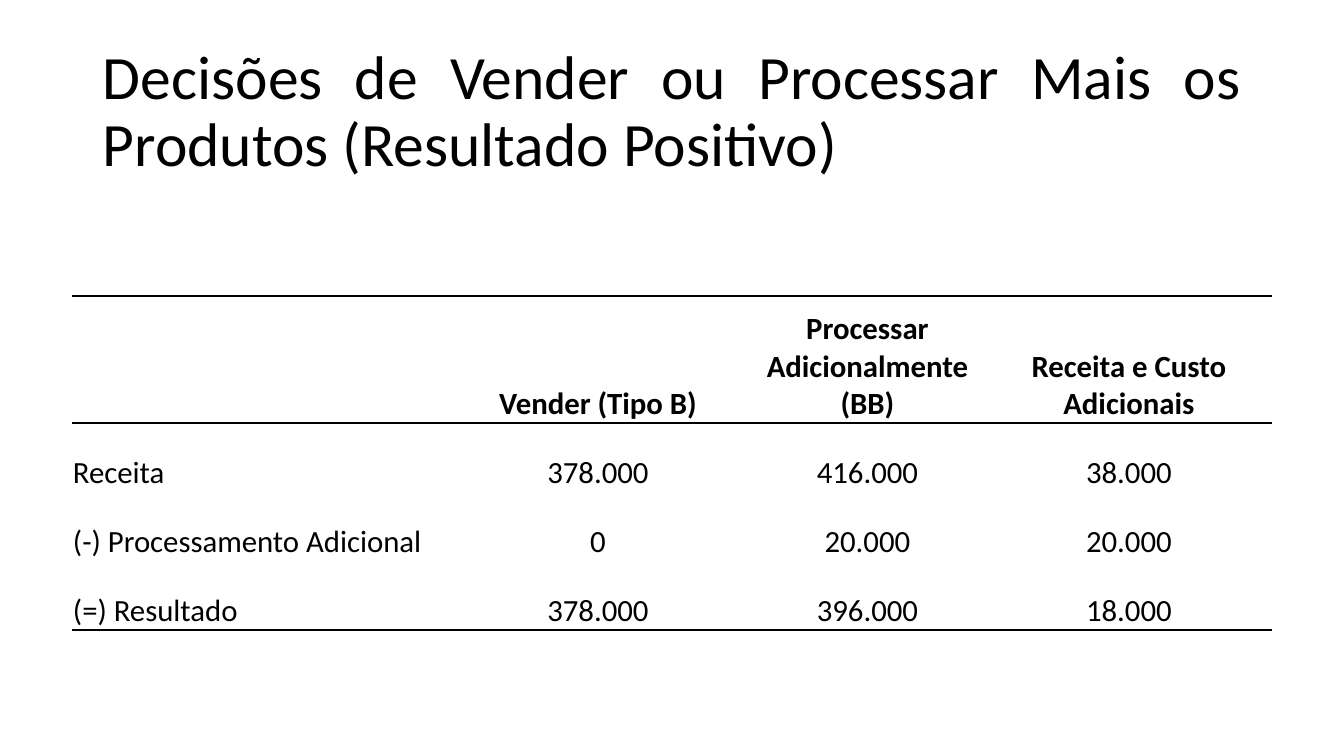
from lxml import etree
from pptx import Presentation
from pptx.dml.color import RGBColor
from pptx.enum.text import MSO_ANCHOR, PP_ALIGN
from pptx.oxml.ns import qn
from pptx.util import Pt

MIDDLE, BOTTOM = MSO_ANCHOR.MIDDLE, MSO_ANCHOR.BOTTOM
LEFT, CENTER, JUSTIFY = PP_ALIGN.LEFT, PP_ALIGN.CENTER, PP_ALIGN.JUSTIFY
SLIDE_WIDTH, SLIDE_HEIGHT = 1344, 756
SCALE = 12192000 / SLIDE_WIDTH

TITLE = "Decisões de Vender ou Processar Mais os Produtos (Resultado Positivo)"
ROWS = [
    ["", "Vender (Tipo B)", "Processar Adicionalmente (BB)", "Receita e Custo Adicionais"],
    ["Receita", "378.000", "416.000", "38.000"],
    ["(-) Processamento Adicional", "0", "20.000", "20.000"],
    ["(=) Resultado", "378.000", "396.000", "18.000"],
]
COLUMN_WIDTHS = [375, 302, 237, 286]
ROW_HEIGHTS = [127, 69, 69, 69]
RULED_EDGES = {0, 1, len(ROWS)}


def px(length):
    return round(length * SCALE)


def color(value):
    return RGBColor.from_string(value)


def assign(target, values):
    for name, value in values.items():
        setattr(target, name, value)


class SlideBuilder:
    font = "Calibri"
    ink = "000000"

    def __init__(self, deck):
        self.page = deck.slides.add_slide(deck.slide_layouts[6])

    def add_text(self, frame, text, size, bold=False, **para_format):
        para = frame.paragraphs[0]
        assign(para, para_format)
        span = para.add_run()
        span.text = text
        assign(span.font, {"name": self.font, "size": Pt(size), "bold": bold})
        span.font.color.rgb = color(self.ink)

    def title(self, text, left, top, width, height):
        box = self.page.shapes.add_textbox(px(left), px(top), px(width), px(height))
        frame = box.text_frame
        assign(frame, {"word_wrap": True, "vertical_anchor": MIDDLE})
        self.add_text(frame, text, 44, alignment=JUSTIFY, line_spacing=0.9)

    def border(self, cell, side, ruled):
        properties = cell._tc.get_or_add_tcPr()
        line = etree.SubElement(properties, qn(f"a:ln{side}"), w=str(Pt(1)))
        if ruled:
            fill = etree.SubElement(line, qn("a:solidFill"))
            etree.SubElement(fill, qn("a:srgbClr"), val=self.ink)
        else:
            etree.SubElement(line, qn("a:noFill"))

    def table(self, rows, left, top, widths, heights):
        frame = self.page.shapes.add_table(
            len(rows), len(widths), px(left), px(top), px(sum(widths)), px(sum(heights))
        )
        table = frame.table
        assign(table, {"first_row": False, "horz_banding": False})
        for column, width in zip(table.columns, widths):
            column.width = px(width)
        for row, height in zip(table.rows, heights):
            row.height = px(height)
        for row_index, texts in enumerate(rows):
            for column_index, text in enumerate(texts):
                cell = table.cell(row_index, column_index)
                assign(cell, {
                    "vertical_anchor": BOTTOM,
                    "margin_left": px(1),
                    "margin_right": px(1),
                    "margin_top": px(1),
                    "margin_bottom": 0,
                })
                self.border(cell, "L", False)
                self.border(cell, "R", False)
                self.border(cell, "T", row_index in RULED_EDGES)
                self.border(cell, "B", row_index + 1 in RULED_EDGES)
                cell.fill.background()
                if text:
                    self.add_text(
                        cell.text_frame, text, 22, bold=row_index == 0,
                        alignment=CENTER if column_index else LEFT,
                    )


def main():
    deck = Presentation()
    assign(deck, {"slide_width": px(SLIDE_WIDTH), "slide_height": px(SLIDE_HEIGHT)})
    builder = SlideBuilder(deck)
    builder.title(TITLE, 93, 40, 1159, 146)
    builder.table(ROWS, 72, 296, COLUMN_WIDTHS, ROW_HEIGHTS)
    deck.save("out.pptx")


if __name__ == "__main__":
    main()
